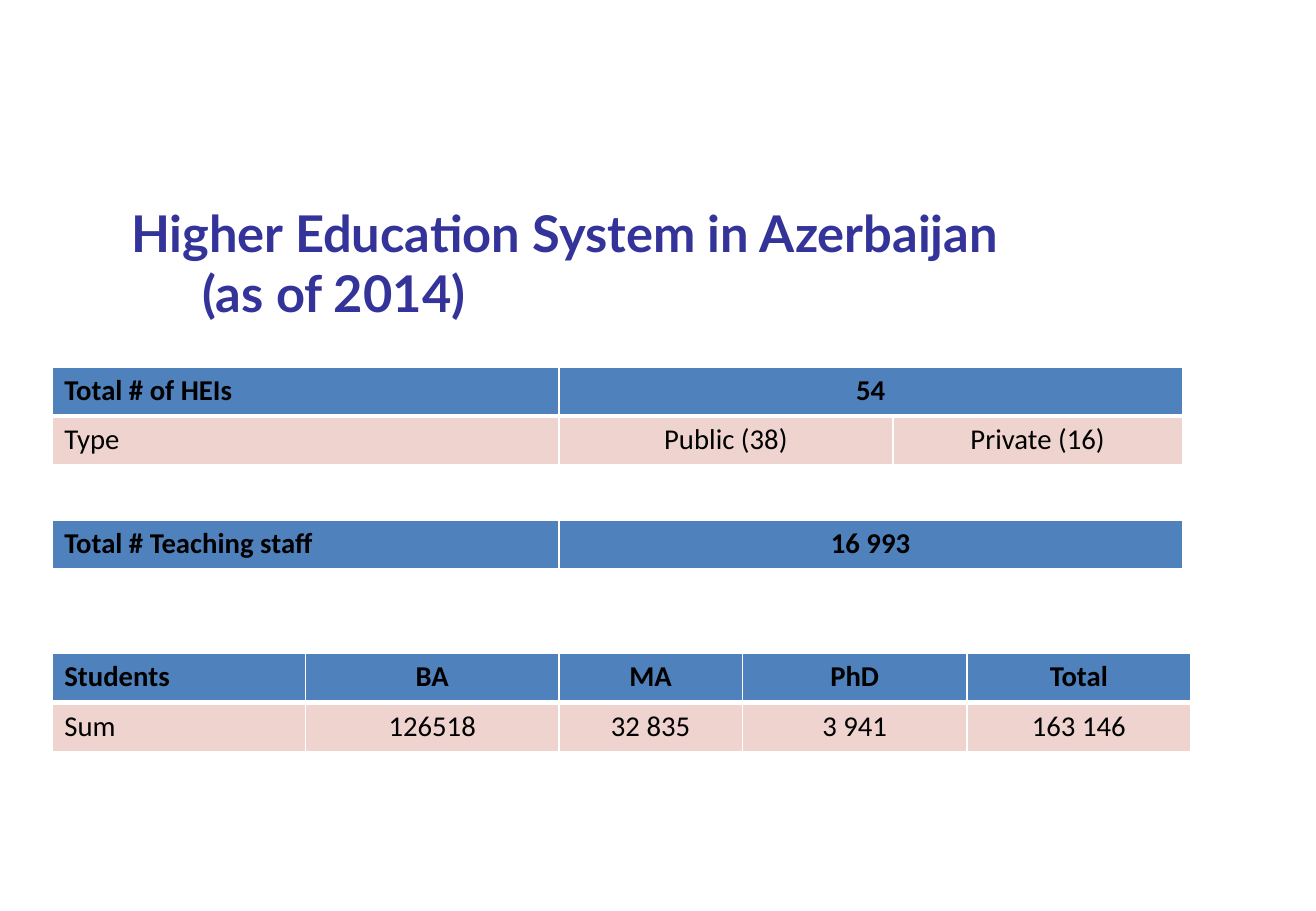
from dataclasses import dataclass

from lxml.etree import SubElement
from pptx import Presentation
from pptx.dml.color import RGBColor as Rgb
from pptx.enum.text import MSO_ANCHOR as Anchor, MSO_AUTO_SIZE as AutoSize, PP_ALIGN as Align
from pptx.oxml.ns import qn
from pptx.util import Emu, Inches, Pt


@dataclass(frozen=True)
class Theme:
    title_font: str = "Lato"
    table_font: str = "Calibri"
    title_size: int = 30
    table_size: int = 17
    title_color: str = "333399"
    text_color: str = "000000"
    header_fill: str = "4F81BD"
    body_fill: str = "EED3CF"
    rule_color: str = "FFFFFF"
    thin_rule: int = 1
    thick_rule: int = 3


THEME = Theme()
SLIDE_W, SLIDE_H = Inches(10.83), Inches(7.5)

# Lengths below are percentages of the slide's width or height
LEFT_EDGE = 3.97
ROW_H = 5.4
LABEL_W = 38.5
TITLE_BOX = (9.05, 21.47, 77.1, 14.67)


def across(percent):
    return Emu(round(SLIDE_W * percent / 100))


def down(percent):
    return Emu(round(SLIDE_H * percent / 100))


def write(frame, text, *, font, size, color, bold=False, align=Align.LEFT):
    frame.text = text
    for paragraph in frame.paragraphs:
        paragraph.alignment = align
        for run in paragraph.runs:
            run.font.name = font
            run.font.size = Pt(size)
            run.font.bold = bold
            run.font.color.rgb = Rgb.from_string(color)


def rule_cell(cell, top, bottom):
    """Draw the four borders, which come before the fill in the cell's XML."""
    properties = cell._tc.get_or_add_tcPr()
    widths = {"a:lnL": THEME.thin_rule, "a:lnR": THEME.thin_rule,
              "a:lnT": top, "a:lnB": bottom}
    for tag, width in widths.items():
        line = SubElement(properties, qn(tag), w=str(Pt(width)))
        solid = SubElement(line, qn("a:solidFill"))
        SubElement(solid, qn("a:srgbClr"), val=THEME.rule_color)


def add_title(slide, text, box):
    left, top, width, height = box
    title = slide.shapes.title
    title.left, title.top = across(left), down(top)
    title.width, title.height = across(width), down(height)
    frame = title.text_frame
    frame.word_wrap = True
    frame.auto_size = AutoSize.NONE
    frame.vertical_anchor = Anchor.MIDDLE
    write(frame, text, font=THEME.title_font, size=THEME.title_size,
          color=THEME.title_color, bold=True)
    # Hanging indent: the second line starts further in
    indent = Inches(0.59)
    paragraph_format = frame.paragraphs[0]._p.get_or_add_pPr()
    paragraph_format.set("marL", str(indent))
    paragraph_format.set("indent", str(-indent))


def add_figures(slide, top, columns, rows):
    """Place a table with a header row; None extends the cell on its left."""
    table = slide.shapes.add_table(
        len(rows), len(columns), across(LEFT_EDGE), down(top),
        across(sum(columns)), down(ROW_H * len(rows))).table
    table.first_row = table.horz_banding = False
    for column, share in zip(table.columns, columns):
        column.width = across(share)

    for r, values in enumerate(rows):
        table.rows[r].height = down(ROW_H)
        is_header = r == 0
        above = THEME.thin_rule if is_header else THEME.thick_rule
        below = THEME.thick_rule if r < len(rows) - 1 else THEME.thin_rule
        for c, value in enumerate(values):
            cell = table.cell(r, c)
            rule_cell(cell, above, below)
            cell.fill.solid()
            cell.fill.fore_color.rgb = Rgb.from_string(
                THEME.header_fill if is_header else THEME.body_fill)
            if value is None:
                table.cell(r, c - 1).merge(cell)
                continue
            write(cell.text_frame, value, font=THEME.table_font,
                  size=THEME.table_size, color=THEME.text_color,
                  bold=is_header, align=Align.CENTER if c else Align.LEFT)


def main():
    deck = Presentation()
    deck.slide_width, deck.slide_height = SLIDE_W, SLIDE_H
    slide = deck.slides.add_slide(deck.slide_layouts.get_by_name("Title Only"))

    add_title(slide, "Higher Education System in Azerbaijan\v(as of 2014)", TITLE_BOX)

    # Institutions
    add_figures(slide, 40.27, (LABEL_W, 25.39, 21.98), [
        ("Total # of HEIs", "54", None),
        ("Type", "Public (38)", "Private (16)"),
    ])
    # Teaching staff
    add_figures(slide, 57.07, (LABEL_W, 47.37), [
        ("Total # Teaching staff", "16 993"),
    ])
    # Students
    add_figures(slide, 71.73, (LABEL_W / 2, LABEL_W / 2, 13.94, 17.08, 16.99), [
        ("Students", "BA", "MA", "PhD", "Total"),
        ("Sum", "126518", "32 835", "3 941", "163 146"),
    ])

    deck.save("out.pptx")


if __name__ == "__main__":
    main()
